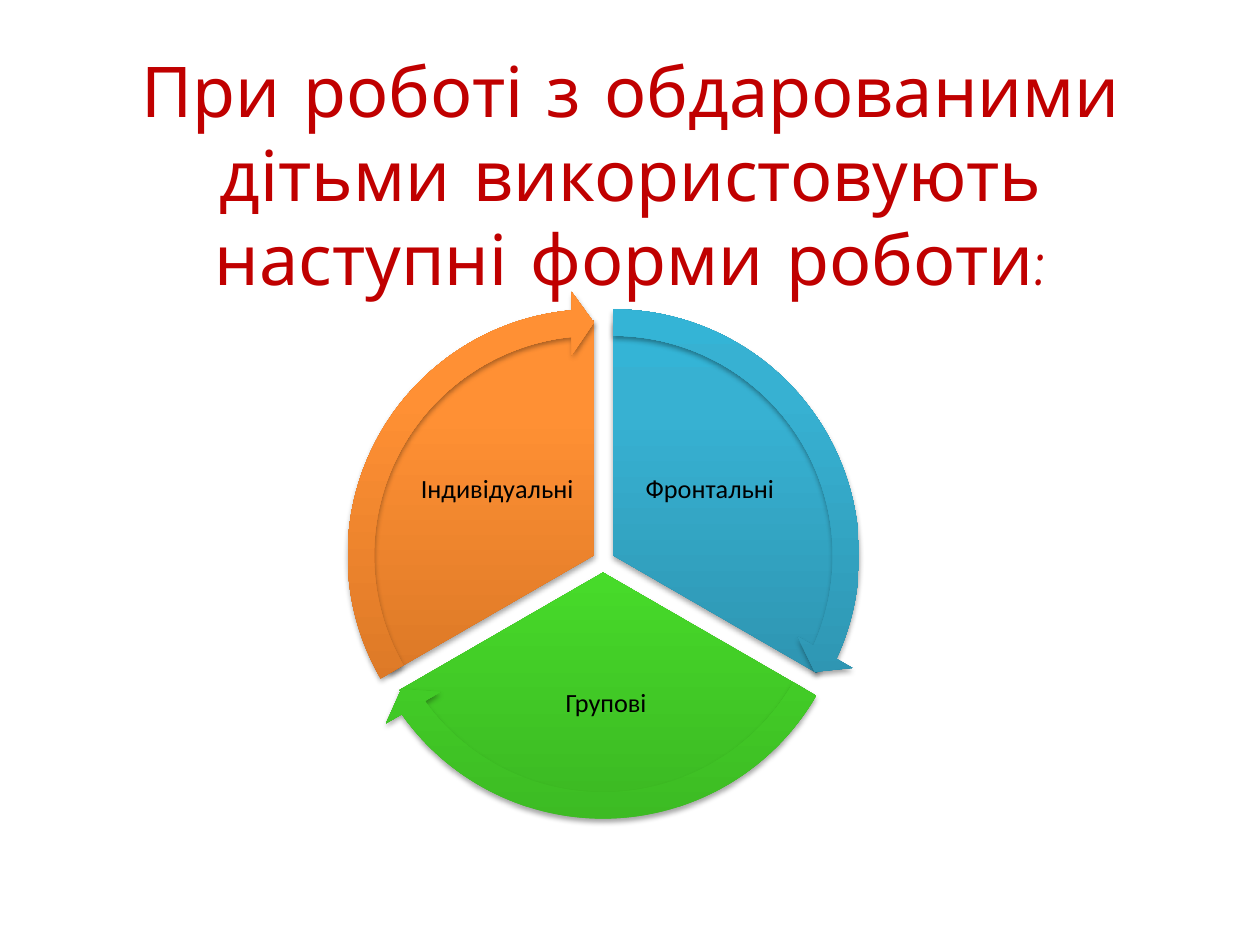
"""Build a slide with a three-part cycle of forms of work."""
from copy import deepcopy
from typing import NamedTuple

from lxml import etree
from pptx import Presentation
from pptx.dml.color import RGBColor
from pptx.enum import shapes, text
from pptx.oxml import ns
from pptx.util import Pt

RED = RGBColor(0xC0, 0x00, 0x00)
BLACK = RGBColor(0x00, 0x00, 0x00)
BLUES = (RGBColor(0x2A, 0x88, 0xA2), RGBColor(0x37, 0xB1, 0xD2), RGBColor(0x34, 0xB4, 0xD6))
GREENS = (RGBColor(0x3C, 0xB9, 0x23), RGBColor(0x4E, 0xF0, 0x2E), RGBColor(0x4C, 0xF5, 0x2A))
ORANGES = (RGBColor(0xCC, 0x6E, 0x20), RGBColor(0xFF, 0x90, 0x34), RGBColor(0xFF, 0x91, 0x36))
STOPS = (0, 0.8, 1)
PIE_SIZE = 268.6
ARROW_SIZE = 302.4
ANGLE_UNIT = 0.6


class Sector(NamedTuple):
    label: str
    label_box: tuple
    center: tuple
    angles: tuple
    arrow_angles: tuple
    colors: tuple


SECTORS = (
    Sector("Фронтальні", (357.8, 239.8, 95.8, 79.9), (350.4, 317.4), (270, 30), (24.54, 269.99), BLUES),
    Sector("Групові", (274.3, 367.2, 144, 70.6), (344.6, 327.2), (30, 150), (144.53, 30.01), GREENS),
    Sector("Індивідуальні", (236.2, 239.8, 95.8, 79.9), (339.3, 317.4), (150, 270), (264.55, 150), ORANGES),
)


def add_text(parent, content, box, *, font, size, color, insets=(7.2, 3.6), spacing=1.0):
    shape = parent.shapes.add_textbox(*map(Pt, box))
    frame = shape.text_frame
    frame.word_wrap = True
    frame.vertical_anchor = text.MSO_ANCHOR.MIDDLE
    frame.margin_left = frame.margin_right = Pt(insets[0])
    frame.margin_top = frame.margin_bottom = Pt(insets[1])
    paragraph = frame.paragraphs[0]
    paragraph.alignment = text.PP_ALIGN.CENTER
    paragraph.line_spacing = spacing
    run = paragraph.add_run()
    run.text = content
    run.font.name = font
    run.font.size = Pt(size)
    run.font.color.rgb = color


def fill_gradient(shape, colors):
    shape.fill.gradient()
    shape.fill.gradient_angle = 90
    stop_list = shape.element.spPr.find(".//" + ns.qn("a:gsLst"))
    stop_list.append(deepcopy(stop_list[0]))
    for stop, position, color in zip(shape.fill.gradient_stops, STOPS, colors):
        stop.position = position
        stop.color.rgb = color


def add_shadow(shape):
    shape.shadow.inherit = False
    effects = shape.element.spPr.find(ns.qn("a:effectLst"))
    shadow = etree.SubElement(effects, ns.qn("a:outerShdw"), blurRad=str(Pt(3.1)),
                              dist=str(Pt(1.8)), dir="5400000", rotWithShape="0")
    color = etree.SubElement(shadow, ns.qn("a:srgbClr"), val=str(BLACK))
    etree.SubElement(color, ns.qn("a:alpha"), val="35000")


def add_round_shape(parent, kind, center, size, adjustments, colors):
    left, top = (middle - size / 2 for middle in center)
    shape = parent.shapes.add_shape(kind, Pt(left), Pt(top), Pt(size), Pt(size))
    for index, value in enumerate(adjustments):
        shape.adjustments[index] = value
    fill_gradient(shape, colors)
    shape.line.fill.background()
    add_shadow(shape)


def add_pie(parent, sector):
    angles = [angle * ANGLE_UNIT for angle in sector.angles]
    add_round_shape(parent, shapes.MSO_SHAPE.PIE, sector.center, PIE_SIZE, angles, sector.colors)
    add_text(parent, sector.label, sector.label_box, font="Calibri", size=15, color=BLACK,
             insets=(1.5, 1.5), spacing=0.9)


def add_arrow(parent, sector):
    end, start = (angle * ANGLE_UNIT for angle in sector.arrow_angles)
    add_round_shape(parent, shapes.MSO_SHAPE.CIRCULAR_ARROW, sector.center, ARROW_SIZE,
                    (0.05, 3.28, end, start, 0.06), sector.colors)


def main():
    presentation = Presentation()
    presentation.slide_width, presentation.slide_height = Pt(720), Pt(540)
    slide = presentation.slides.add_slide(presentation.slide_layouts[6])
    add_text(slide, "При роботі з обдарованими дітьми використовують наступні форми роботи:",
             (36.7, 31.7, 647.3, 134.6), font="Comic Neue", size=40, color=RED)
    cycle = slide.shapes.add_group_shape()
    for sector in SECTORS:
        add_pie(cycle, sector)
    for sector in SECTORS:
        add_arrow(cycle, sector)
    presentation.save("out.pptx")


if __name__ == "__main__":
    main()
